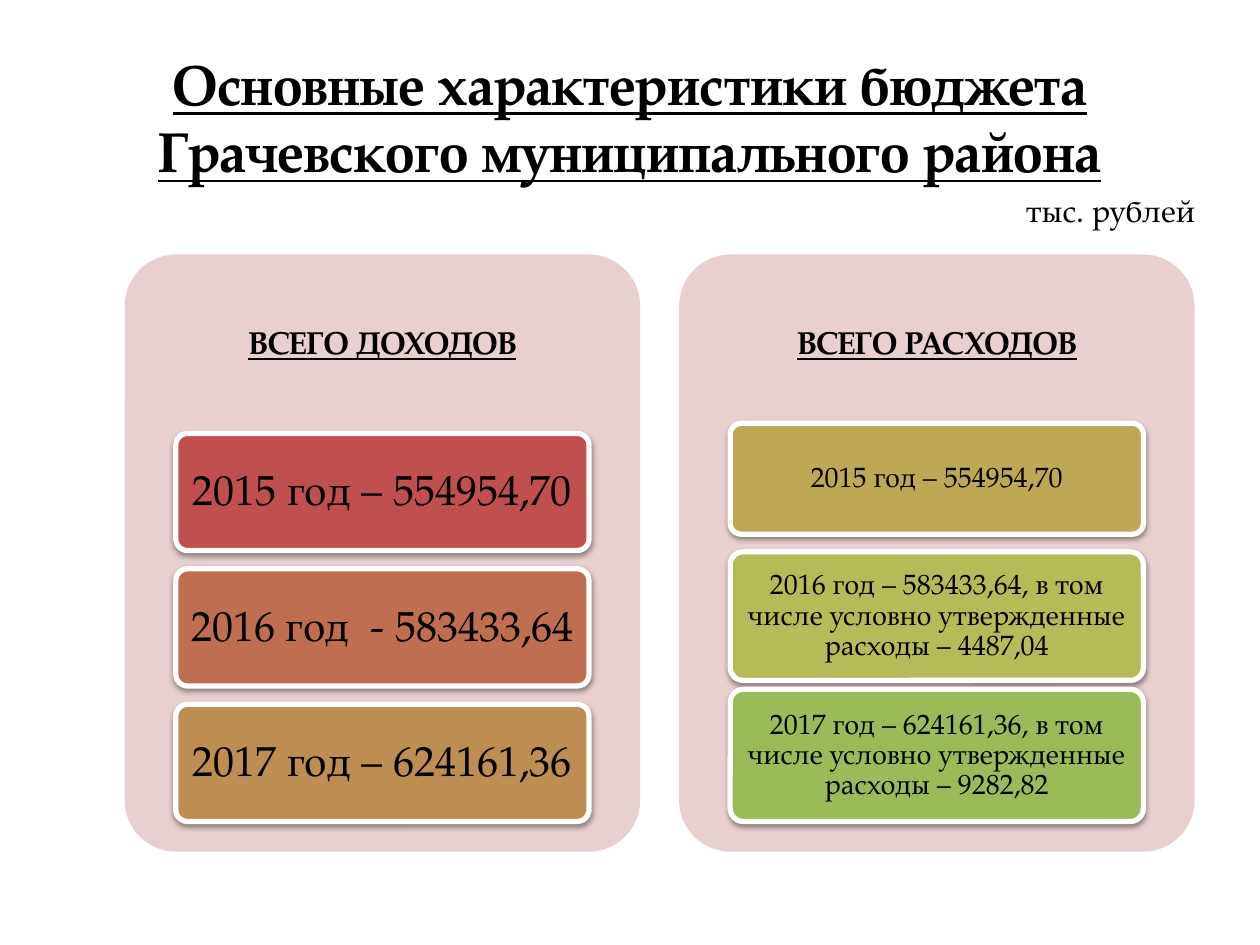
from dataclasses import dataclass

from lxml.etree import SubElement
from pptx import Presentation
from pptx.dml.color import RGBColor
from pptx.enum.shapes import MSO_SHAPE
from pptx.enum.text import MSO_ANCHOR, PP_ALIGN
from pptx.oxml.ns import qn
from pptx.util import Inches, Pt


@dataclass(frozen=True)
class Theme:
    font: str = "TeX Gyre Pagella"
    text: str = "000000"
    panel: str = "E8D0D0"
    border: str = "FFFFFF"
    title: int = 32
    heading: int = 18
    large: int = 24
    small: int = 16


THEME = Theme()
PANEL_W, PANEL_H, HEADING_H = 4.09, 4.74, 1.42
CARD_W = 3.28

# Each card: text, fill, top within the panel, height
INCOME = [
    (text, fill, HEADING_H + i * 1.075, 0.93)
    for i, (text, fill) in enumerate([
        ("2015 год – 554954,70", "C0504D"),
        ("2016 год  - 583433,64", "BF6F4F"),
        ("2017 год – 624161,36", "BE8D52"),
    ])
]
EXPENSES = [
    ("2015 год – 554954,70", "BDA954", 1.34, 0.88),
    ("2016 год – 583433,64, в том числе условно утвержденные расходы – 4487,04",
     "B5BC57", 2.36, 1.02),
    ("2017 год – 624161,36, в том числе условно утвержденные расходы – 9282,82",
     "9BBB59", 3.45, 1.05),
]


def write(sp, text, size, insets=(0.1, 0.05), spacing=1.0, **style):
    tf = sp.text_frame
    dx, dy = map(Inches, insets)
    frame = dict(word_wrap=True, vertical_anchor=MSO_ANCHOR.MIDDLE,
                 margin_left=dx, margin_right=dx, margin_top=dy, margin_bottom=dy)
    for name, value in frame.items():
        setattr(tf, name, value)
    p = tf.paragraphs[0]
    p.alignment, p.line_spacing = PP_ALIGN.CENTER, spacing
    r = p.add_run()
    r.text = text
    for name, value in dict(name=THEME.font, size=Pt(size), **style).items():
        setattr(r.font, name, value)
    r.font.color.rgb = RGBColor.from_string(THEME.text)


def add_text(s, box, text, size, **options):
    sp = s.shapes.add_textbox(*map(Inches, box))
    write(sp, text, size, **options)


def add_round_rect(s, box, fill):
    sp = s.shapes.add_shape(MSO_SHAPE.ROUNDED_RECTANGLE, *map(Inches, box))
    sp.adjustments[0] = 0.1
    sp.shadow.inherit = False
    sp.fill.solid()
    sp.fill.fore_color.rgb = RGBColor.from_string(fill)
    sp.line.fill.background()
    return sp


def add_shadow(sp):
    effects = sp._element.spPr.find(qn("a:effectLst"))
    shadow = SubElement(effects, qn("a:outerShdw"), blurRad=str(Pt(3.1)),
                        dist=str(Pt(1.6)), dir="5400000", rotWithShape="0")
    color = SubElement(shadow, qn("a:srgbClr"), val="000000")
    SubElement(color, qn("a:alpha"), val="38000")


def add_card(s, box, text, fill, size, insets):
    sp = add_round_rect(s, box, fill)
    sp.line.color.rgb = RGBColor.from_string(THEME.border)
    sp.line.width = Pt(3)
    add_shadow(sp)
    write(sp, text, size, insets, spacing=0.9)


def add_panel(s, left, top, heading, cards, size, insets):
    add_round_rect(s, (left, top, PANEL_W, PANEL_H), THEME.panel)
    add_text(s, (left, top, PANEL_W, HEADING_H), heading, THEME.heading,
             insets=(0.07, 0.07), spacing=0.9, bold=True, underline=True)
    card_left = left + (PANEL_W - CARD_W) / 2
    for text, fill, offset, height in cards:
        add_card(s, (card_left, top + offset, CARD_W, height), text, fill, size, insets)


def add_header(s, left, top):
    add_text(s, (left, top, 9, 1.25),
             "Основные характеристики бюджета Грачевского муниципального района",
             THEME.title, bold=True, underline=True)
    add_text(s, (left + 7.49, top + 1.17, 1.65, 0.39), "тыс. рублей", THEME.heading)


def main():
    prs = Presentation()
    prs.slide_width, prs.slide_height = Inches(10), Inches(7.5)
    s = prs.slides.add_slide(prs.slide_layouts[6])

    # Title and unit of measure
    add_header(s, 0.5, 0.3)

    # Income and expense panels
    add_panel(s, 0.99, 2.02, "ВСЕГО ДОХОДОВ", INCOME, THEME.large, (0.07, 0.05))
    add_panel(s, 5.39, 2.02, "ВСЕГО РАСХОДОВ", EXPENSES, THEME.small, (0.04, 0.03))

    prs.save("out.pptx")


if __name__ == "__main__":
    main()
